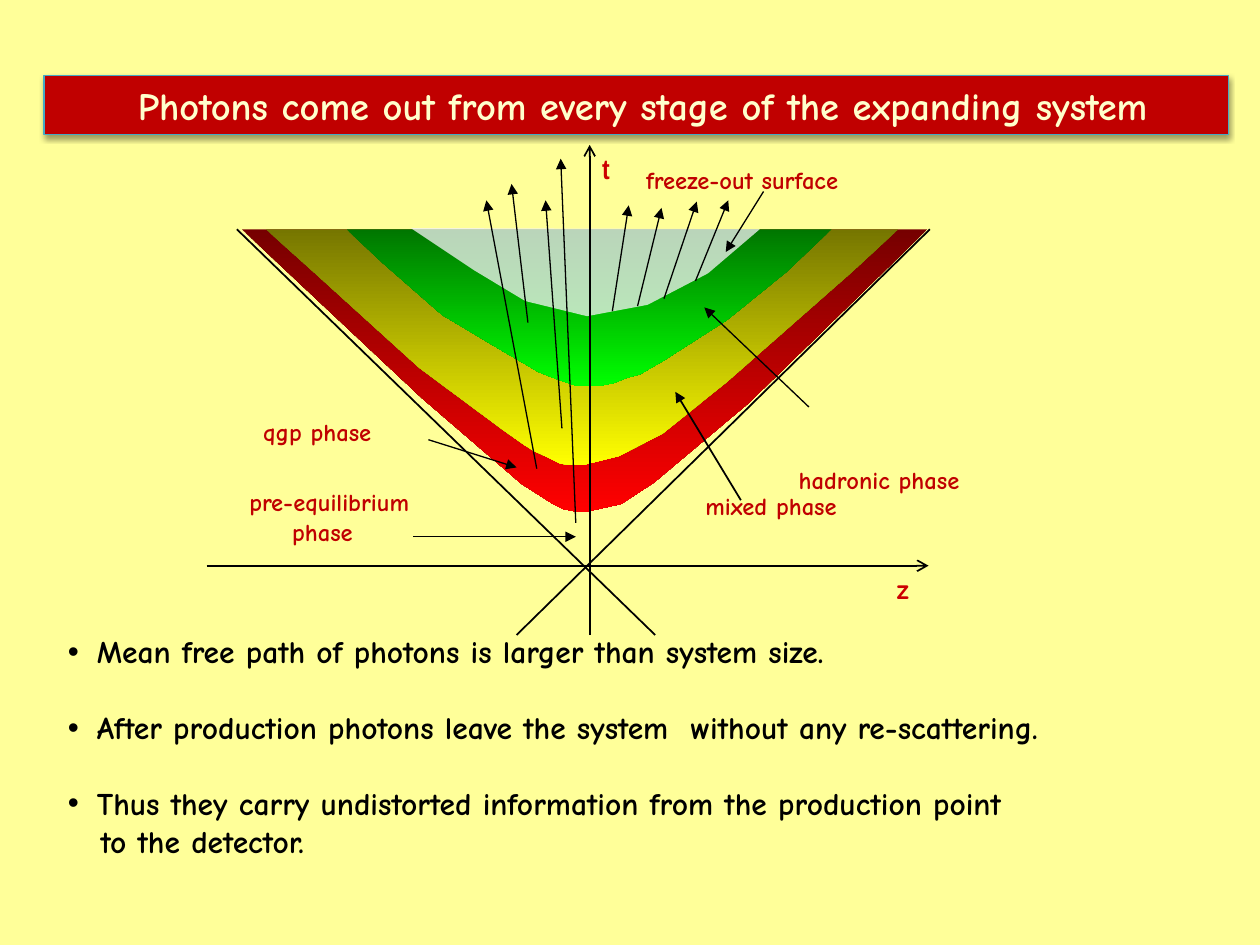
from collections import namedtuple

from lxml import etree
from pptx import Presentation
from pptx.dml.color import RGBColor
from pptx.enum.shapes import MSO_CONNECTOR as Connector
from pptx.enum.text import MSO_ANCHOR as Anchor, MSO_AUTO_SIZE as AutoSize, PP_ALIGN as Align
from pptx.oxml.ns import qn
from pptx.util import Inches, Pt

Box = namedtuple("Box", "left top width height")

FONT = "Comic Neue"
LABEL_RED = "C00000"
AXIS_RED = "CC0000"
BLACK = "000000"

# Positions inside the diagram are inches from its top left corner.
AXES = [((0.04, 3.39), (5.77, 3.39)), ((3.08, 3.94), (3.08, 0.05))]
LIGHT_CONE = [((2.5, 3.94), (5.78, 0.72)), ((3.6, 3.94), (0.28, 0.72))]
BANDS = [
    ("760000", "FF0000", [
        (0.32, 0.72), (1.75, 2.06), (2.54, 2.74), (2.79, 2.9), (2.87, 2.94), (2.97, 2.96),
        (3.06, 2.96), (3.33, 2.9), (3.59, 2.73), (4.34, 2.1), (5.76, 0.72)]),
    ("767600", "FFFF00", [
        (0.51, 0.72), (0.88, 1.05), (1.73, 1.82), (2.39, 2.31), (2.56, 2.43), (2.64, 2.48),
        (2.75, 2.53), (2.85, 2.58), (2.93, 2.59), (3.03, 2.59), (3.31, 2.52), (3.66, 2.34),
        (4.17, 1.93), (5.16, 1.06), (5.53, 0.72)]),
    ("007600", "00FF00", [
        (1.15, 0.72), (1.44, 0.99), (1.91, 1.4), (2.43, 1.71), (2.57, 1.79), (2.67, 1.85),
        (2.77, 1.89), (2.88, 1.93), (2.97, 1.96), (3.07, 1.96), (3.17, 1.96), (3.27, 1.94),
        (3.37, 1.9), (3.48, 1.87), (3.67, 1.76), (4.17, 1.44), (4.64, 1.06), (5, 0.72)]),
]
FREEZE_OUT = [(1.66, 0.71), (2.17, 1.05), (2.57, 1.29), (3.06, 1.41),
              (3.54, 1.32), (4.02, 1.07), (4.43, 0.72)]
PHOTONS = [
    ((3.26, 1.37), (3.39, 0.53)), ((2.86, 2.3), (2.73, 0.49)), ((2.66, 2.62), (2.26, 0.49)),
    ((2.59, 1.46), (2.46, 0.36)), ((3.46, 1.33), (3.65, 0.55)), ((3.92, 1.13), (4.18, 0.49)),
    ((3.67, 1.27), (3.93, 0.5)), ((2.97, 3.05), (2.85, 0.16)),
]
# Start, end and width of the arrow that leads from each label to its phase.
POINTERS = [
    ((1.68, 3.16), (2.97, 3.16), 0.75), ((4.28, 2.87), (3.76, 2.01), 1),
    ((4.82, 2.13), (3.99, 1.34), 0.75), ((1.8, 2.39), (2.5, 2.61), 0.75),
    ((4.46, 0.42), (4.16, 0.9), 0.75),
]
LABELS = [
    ("hadronic phase", Box(4.64, 2.54, 1.61, 0.34)),
    ("qgp phase", Box(0.39, 2.16, 1.13, 0.34)),
    ("mixed phase", Box(3.9, 2.75, 1.69, 0.34)),
    ("freeze-out surface", Box(3.43, 0.16, 2.53, 0.34)),
]


def rgb(color):
    return RGBColor.from_string(color)


def add_span(para, text, size, color, font=FONT):
    span = para.add_run()
    span.text = text
    span.font.name = font
    span.font.size = Pt(size)
    span.font.bold = True
    span.font.color.rgb = rgb(color)


def indent(para, left, first=0, bullet=None):
    props = para._p.get_or_add_pPr()
    props.set("marL", str(Inches(left)))
    props.set("indent", str(Inches(first)))
    if bullet:
        etree.SubElement(props, qn("a:buFont"), typeface="Arial")
        etree.SubElement(props, qn("a:buChar"), char=bullet)


def add_text_frame(page, box):
    frame = page.shapes.add_textbox(*map(Inches, box)).text_frame
    frame.word_wrap = True
    return frame


def add_label(page, text, box, size=14, color=LABEL_RED, font=FONT):
    frame = add_text_frame(page, box)
    add_span(frame.paragraphs[0], text, size, color, font)
    return frame


def add_line(page, box, start, end, width, tip=None):
    ends = [Inches(origin + offset)
            for point in (start, end)
            for origin, offset in zip((box.left, box.top), point)]
    line = page.shapes.add_connector(Connector.STRAIGHT, *ends)
    line.line.color.rgb = rgb(BLACK)
    line.line.width = Pt(width)
    if tip:
        etree.SubElement(line.line._get_or_add_ln(), qn("a:tailEnd"), type=tip)
    etree.SubElement(line._element.spPr, qn("a:effectLst"))


def add_area(page, box, points):
    corners = [(Inches(box.left + x), Inches(box.top + y)) for x, y in points]
    builder = page.shapes.build_freeform(*corners[0])
    builder.add_line_segments(corners[1:], close=True)
    area = builder.convert_to_shape()
    area.shadow.inherit = False
    area.line.fill.background()
    return area


def add_band(page, box, top_color, bottom_color, points):
    fill = add_area(page, box, points).fill
    fill.gradient()
    fill.gradient_angle = 270
    for stop, color, position in zip(fill.gradient_stops, (top_color, bottom_color), (0, 1)):
        stop.color.rgb = rgb(color)
        stop.position = position


def add_freeze_out(page, box):
    area = add_area(page, box, FREEZE_OUT)
    area.fill.solid()
    area.fill.fore_color.rgb = rgb("F2F2F2")
    color = area._element.spPr.find(".//" + qn("a:srgbClr"))
    etree.SubElement(color, qn("a:alpha"), val="77000")


def place_title(page, box):
    title = page.shapes.title
    title.left, title.top, title.width, title.height = map(Inches, box)
    title.fill.solid()
    title.fill.fore_color.rgb = rgb(LABEL_RED)
    title.line.color.rgb = rgb("46AAC5")
    title.line.width = Pt(0.75)
    effects = etree.SubElement(title._element.spPr, qn("a:effectLst"))
    shadow = etree.SubElement(effects, qn("a:outerShdw"), blurRad=str(Pt(3.1)),
                              dist=str(Pt(1.6)), dir="5400000", rotWithShape="0")
    color = etree.SubElement(shadow, qn("a:srgbClr"), val=BLACK)
    etree.SubElement(color, qn("a:alpha"), val="38000")
    frame = title.text_frame
    frame.auto_size = AutoSize.NONE
    frame.vertical_anchor = Anchor.MIDDLE
    frame.margin_left = Inches(0.2)
    para = frame.paragraphs[0]
    para.alignment = Align.CENTER
    add_span(para, "Photons come out from every stage of the expanding system", 22, "FFFFCC")


def draw_diagram(page, box):
    """Space-time diagram: light cone, phases, photons and labels."""
    horizontal, vertical = AXES
    add_line(page, box, *horizontal, 1, "arrow")
    for edge in LIGHT_CONE:
        add_line(page, box, *edge, 1)
    for band in BANDS:
        add_band(page, box, *band)
    add_freeze_out(page, box)
    add_line(page, box, *vertical, 1, "arrow")
    for photon in PHOTONS:
        add_line(page, box, *photon, 0.75, "triangle")
    for pointer in POINTERS:
        add_line(page, box, *pointer, "triangle")

    def inside(part):
        return part._replace(left=box.left + part.left, top=box.top + part.top)

    for text, part in LABELS:
        add_label(page, text, inside(part))
    frame = add_label(page, "pre-equilibrium", inside(Box(0.28, 2.72, 2.01, 0.57)))
    second = frame.add_paragraph()
    indent(second, 0.34)
    add_span(second, "phase", 14, LABEL_RED)
    add_label(page, "z", inside(Box(5.42, 3.39, 0.4, 0.37)), 16, AXIS_RED)
    add_label(page, "t", inside(Box(3.08, 0.05, 0.34, 0.37)), 16, AXIS_RED, "Arial Narrow")


def write_points(page, box):
    frame = add_text_frame(page, box)
    points = [
        "Mean free path of photons is larger than system size.",
        "After production photons leave the system  without any re-scattering.",
        "Thus they carry undistorted information from the production point",
    ]
    for number, text in enumerate(points):
        para = frame.add_paragraph() if number else frame.paragraphs[0]
        para.space_before = Pt(21.7 if number else 0)
        indent(para, 0.23, -0.23, "•")
        add_span(para, text, 18, BLACK)
    para = frame.add_paragraph()
    indent(para, 0.26)
    add_span(para, "to the detector.", 18, BLACK)


def main():
    deck = Presentation()
    deck.slide_width, deck.slide_height = Inches(10), Inches(7.5)
    page = deck.slides.add_slide(deck.slide_layouts.get_by_name("Title Only"))
    page.background.fill.solid()
    page.background.fill.fore_color.rgb = rgb("FFFF99")
    place_title(page, Box(0.35, 0.6, 9.4, 0.47))
    draw_diagram(page, Box(1.6, 1.1, 6.25, 3.94))
    write_points(page, Box(0.44, 4.97, 9.26, 1.92))
    deck.save("out.pptx")


if __name__ == "__main__":
    main()
